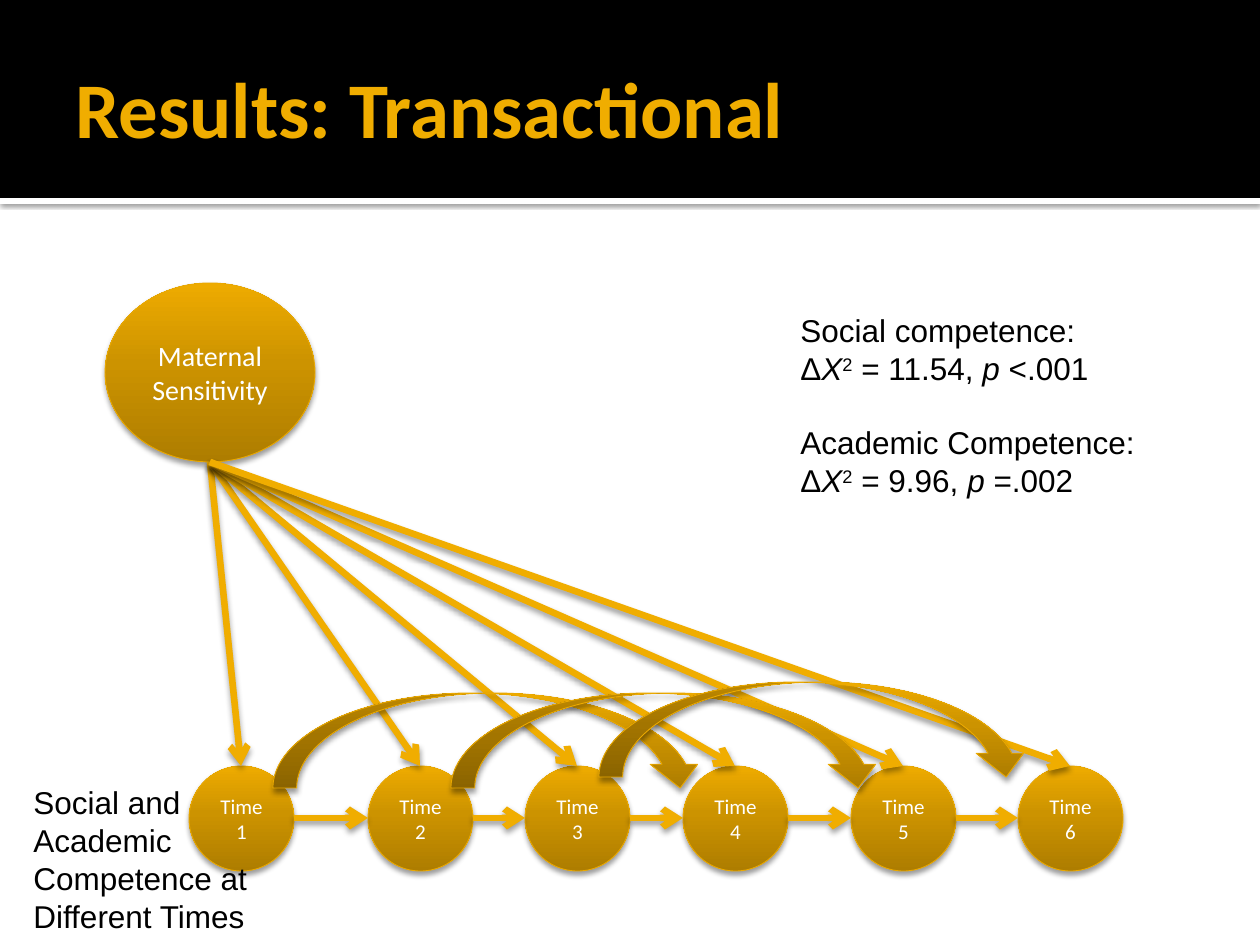
from lxml import etree
from pptx import Presentation
from pptx.dml.color import RGBColor
from pptx.enum.shapes import MSO_CONNECTOR as CXN, MSO_SHAPE as SHAPE
from pptx.enum.text import MSO_ANCHOR as ANCHOR, PP_ALIGN as ALIGN
from pptx.oxml import parse_xml
from pptx.oxml.ns import nsdecls, qn
from pptx.util import Pt

PX = 914400 / 126
COLORS = {"black": "000000", "white": "FFFFFF", "gold": "F0AD00", "edge": "EBA900"}
GRADIENT = [(0, "AE7D00"), (55, "CC9300"), (100, "EEAB00")]

# Shadows: opacity in percent, blur and distance in points
BAR_SHADOW = (60, 2.5, 0.8)
SHAPE_SHADOW = (38, 3.1, 2)
LINE_SHADOW = (38, 3.5, 2)

# Text formats
TITLE = {"size": Pt(45), "name": "Calibri", "color": "gold", "bold": True}
NODE = {"size": Pt(16), "name": "Calibri", "color": "white"}
TIME = {**NODE, "size": Pt(12)}
BODY = {"size": Pt(18), "name": "Arial", "color": "black"}
ITALIC = {**BODY, "italic": True}
SUPER = {**BODY, "baseline": "30000"}

# Row of time points
TIME_LEFTS = [189, 368, 525, 683, 851, 1018]
TIME_TOP, TIME_SIZE = 766, 105


def px(*values):
    return [round(v * PX) for v in values]


def rgb(name):
    return RGBColor.from_string(COLORS[name])


def add_shadow(s, shadow):
    alpha, blur, dist = shadow
    s._element.spPr.append(parse_xml(
        f'<a:effectLst {nsdecls("a")}><a:outerShdw blurRad="{Pt(blur)}" '
        f'dist="{Pt(dist)}" dir="5400000" rotWithShape="0"><a:srgbClr val="{COLORS["black"]}">'
        f'<a:alpha val="{alpha * 1000}"/></a:srgbClr></a:outerShdw></a:effectLst>'))


def add_run(p, text, fmt):
    r = p.add_run()
    r.text = text
    for key, value in fmt.items():
        if key == "color":
            r.font.color.rgb = rgb(value)
        elif key == "baseline":
            r._r.get_or_add_rPr().set(key, value)
        else:
            setattr(r.font, key, value)


def add_text(slide, box, paragraphs, anchor=ANCHOR.TOP):
    tf = slide.shapes.add_textbox(*px(*box)).text_frame
    tf.word_wrap = True
    tf.vertical_anchor = anchor
    for i, runs in enumerate(paragraphs):
        p = tf.add_paragraph() if i else tf.paragraphs[0]
        for text, fmt in runs:
            add_run(p, text, fmt)
    return tf


def add_bar(slide, box, color, shadow=None):
    s = slide.shapes.add_shape(SHAPE.RECTANGLE, *px(*box))
    s.fill.solid()
    s.fill.fore_color.rgb = rgb(color)
    s.line.fill.background()
    if shadow:
        add_shadow(s, shadow)
    else:
        s.shadow.inherit = False


def add_gold_shape(slide, kind, box, text="", fmt=NODE):
    s = slide.shapes.add_shape(kind, *px(*box))
    s.line.color.rgb = rgb("edge")
    s.line.width = Pt(0.5)
    stops = "".join(f'<a:gs pos="{pos * 1000}"><a:srgbClr val="{color}"/></a:gs>'
                    for pos, color in GRADIENT)
    s._element.spPr.find(qn("a:prstGeom")).addnext(parse_xml(
        f'<a:gradFill {nsdecls("a")} rotWithShape="1"><a:gsLst>{stops}</a:gsLst>'
        '<a:lin ang="16200000" scaled="0"/></a:gradFill>'))
    add_shadow(s, SHAPE_SHADOW)
    if text:
        tf = s.text_frame
        tf.word_wrap = True
        tf.vertical_anchor = ANCHOR.MIDDLE
        p = tf.paragraphs[0]
        p.alignment = ALIGN.CENTER
        add_run(p, text, fmt)


def add_arrow(slide, start, end):
    s = slide.shapes.add_connector(CXN.STRAIGHT, *px(*start, *end))
    s.line.color.rgb = rgb("gold")
    s.line.width = Pt(3.78)
    etree.SubElement(s.line._get_or_add_ln(), qn("a:tailEnd"), type="arrow")
    add_shadow(s, LINE_SHADOW)


def chi_square(value, p_label, p_value):
    return [("Δ", BODY), ("Χ", ITALIC), ("2", SUPER), (f" = {value}, ", BODY),
            (p_label, ITALIC), (p_value, BODY)]


def main():
    prs = Presentation()
    prs.slide_width, prs.slide_height = px(1260, 945)
    slide = prs.slides.add_slide(prs.slide_layouts[6])

    # Header band and title
    add_bar(slide, (0, 198, 1260, 6), "white", BAR_SHADOW)
    add_bar(slide, (0, 0, 1260, 198), "black")
    tf = add_text(slide, (63, 21, 1134, 173), [[("Results: Transactional", TITLE)]],
                  ANCHOR.MIDDLE)
    tf.margin_right = Pt(3.6)

    # Predictor and time points
    add_gold_shape(slide, SHAPE.OVAL, (105, 283, 210, 179), "Maternal Sensitivity")
    for i, left in enumerate(TIME_LEFTS, 1):
        add_gold_shape(slide, SHAPE.OVAL, (left, TIME_TOP, TIME_SIZE, TIME_SIZE),
                       f"Time {i}", TIME)
    add_text(slide, (21, 777, 252, 165),
             [[("Social and Academic Competence at Different Times", BODY)]])

    # Arrows from the predictor to each time point, then along the row
    for left in TIME_LEFTS:
        add_arrow(slide, (210, 462), (left + TIME_SIZE // 2, TIME_TOP))
    middle = TIME_TOP + TIME_SIZE // 2
    for left, following in zip(TIME_LEFTS, TIME_LEFTS[1:]):
        add_arrow(slide, (left + TIME_SIZE, middle), (following, middle))

    # Curved arrows that skip ahead three time points
    for left, top in [(273, 693), (451, 693), (599, 682)]:
        add_gold_shape(slide, SHAPE.CURVED_DOWN_ARROW, (left, top, 431, 95))

    # Test statistics
    tf = add_text(slide, (788, 305, 388, 242), [
        [("Social competence:", BODY)],
        chi_square("11.54", "p", " <.001"),
        [("Academic Competence:", BODY)],
        chi_square("9.96", "p ", "=.002"),
    ])
    tf.paragraphs[2].space_before = Pt(21)

    prs.save("out.pptx")


if __name__ == "__main__":
    main()
